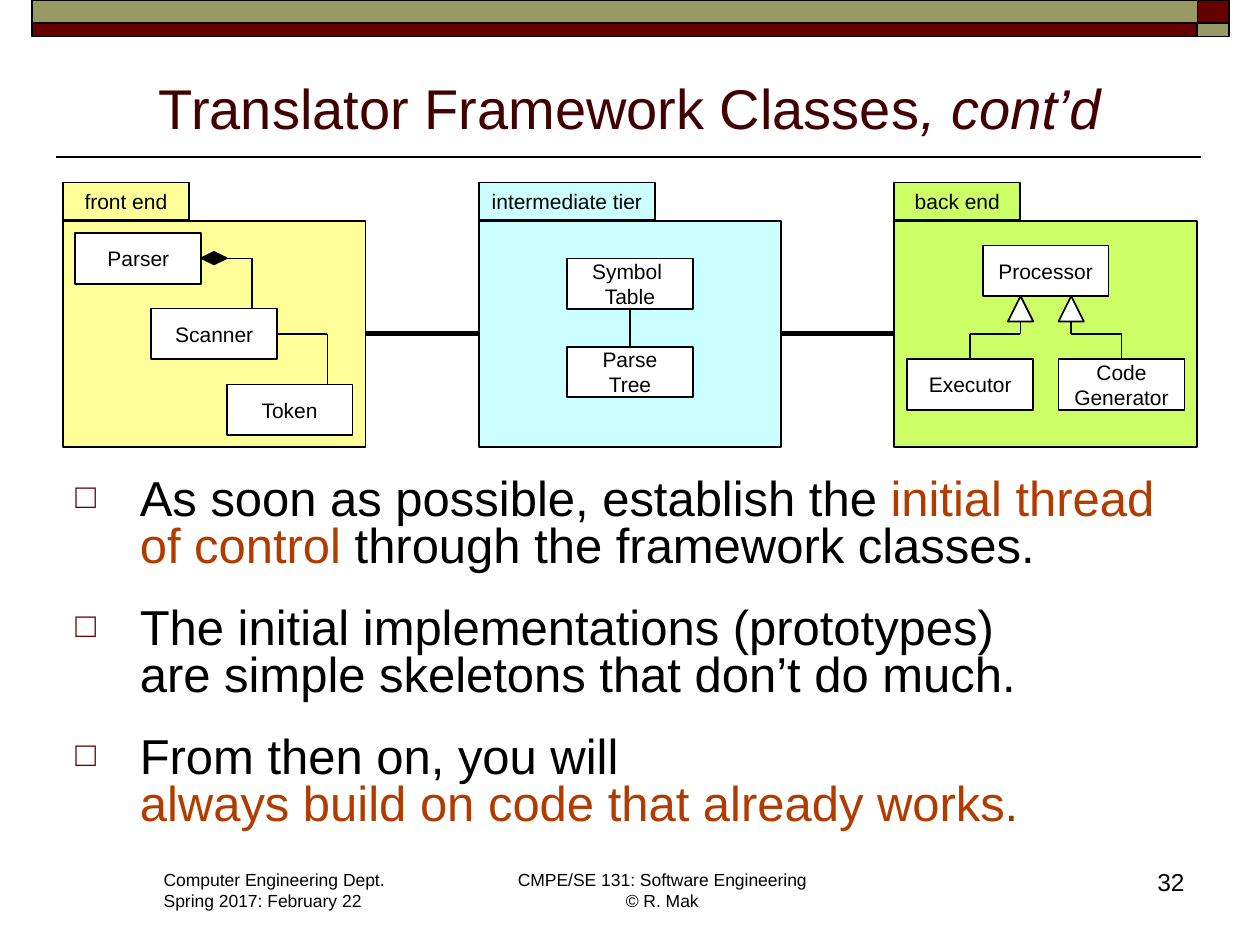
from itertools import pairwise

from lxml.etree import SubElement
from pptx import Presentation
from pptx.dml.color import RGBColor
from pptx.enum.shapes import MSO_CONNECTOR as Connector, MSO_SHAPE as Shape
from pptx.enum.text import MSO_ANCHOR as Anchor, PP_ALIGN as Align
from pptx.oxml.ns import qn
from pptx.util import Cm, Pt

FONT = "Arial"
BLACK, WHITE, MAROON, OLIVE = "000000", "FFFFFF", "660000", "999966"
TITLE_COLOR, ACCENT, STOP_COLOR = "420000", "B23C00", "993300"

# All positions below are in inches: left, top, width, height.
BANDS = [
    (9.5, 0, 0.25, 0.18, MAROON),
    (0.25, 0, 9.25, 0.18, OLIVE),
    (0.25, 0.18, 9.25, 0.11, MAROON),
    (9.5, 0.18, 0.25, 0.11, OLIVE),
]
TITLE = [("Translator Framework Classes", False), (", cont’d", True)]

# Label, tab width, colour
PACKAGES = [
    ("front end", 1, "FFFF99"),
    ("intermediate tier", 1.4, "CCFFFF"),
    ("back end", 1, "CCFF66"),
]
PACKAGE_LEFT, PACKAGE_TOP, PACKAGE_STEP = 0.5, 1.75, 3.3
PACKAGE_WIDTH, PACKAGE_HEIGHT, TAB_HEIGHT = 2.4, 1.8, 0.3

# Lines of the name, left, top
CLASSES = [
    (["Parser"], 0.6, 1.85),
    (["Scanner"], 1.2, 2.45),
    (["Token"], 1.8, 3.05),
    (["Symbol ", "Table"], 4.5, 2.05),
    (["Parse", "Tree"], 4.5, 2.75),
    (["Processor"], 7.8, 1.95),
    (["Executor"], 7.2, 2.85),
    (["Code", "Generator"], 8.4, 2.85),
]
CLASS_WIDTH, CLASS_HEIGHT = 1, 0.4
INHERITANCE_ARROWS = [(8, 2.35), (8.4, 2.35)]
RELATIONS = [
    [(1.8, 2.05), (2, 2.05), (2, 2.45)],
    [(2.2, 2.65), (2.6, 2.65), (2.6, 3.05)],
    [(5, 2.45), (5, 2.75)],
    [(8.1, 2.55), (8.1, 2.65), (7.7, 2.65), (7.7, 2.85)],
    [(8.5, 2.55), (8.5, 2.65), (8.9, 2.65), (8.9, 2.85)],
]
BULLETS = [
    [("As soon as possible, establish the ", BLACK),
     ("initial thread of control ", ACCENT),
     ("through the framework classes.", BLACK)],
    [("The initial implementations (prototypes) \n"
      "are simple skeletons that don’t do much.", BLACK)],
    [("From then on, you will \n", BLACK),
     ("always build on code that already works", ACCENT),
     (".", STOP_COLOR)],
]
FOOTER_LEFT = ["Computer Engineering Dept.", "Spring 2017: February 22"]
FOOTER_CENTER = ["CMPE/SE 131: Software Engineering\n© R. Mak"]
PAGE_NUMBER = ["32"]


def inches(*values):
    return [Cm(round(value * 2.54, 2)) for value in values]


def color(hex_string):
    return RGBColor.from_string(hex_string)


def add_run(paragraph, text, size, hex_string=BLACK, italic=False):
    """Add text to a paragraph, turning each newline into a line break."""
    for index, part in enumerate(text.split("\n")):
        if index:
            paragraph.add_line_break()
        if part:
            run = paragraph.add_run()
            run.text = part
            run.font.name = FONT
            run.font.size = Pt(size)
            run.font.italic = italic
            run.font.color.rgb = color(hex_string)


def add_paragraphs(frame, count):
    return [frame.paragraphs[0]] + [frame.add_paragraph() for _ in range(count - 1)]


def write_lines(frame, lines, size, align):
    for paragraph, line in zip(add_paragraphs(frame, len(lines)), lines):
        paragraph.alignment = align
        add_run(paragraph, line, size)


def add_box(slide, box, fill, lines=(), kind=Shape.RECTANGLE):
    shape = slide.shapes.add_shape(kind, *inches(*box))
    shape.shadow.inherit = False
    shape.fill.solid()
    shape.fill.fore_color.rgb = color(fill)
    shape.line.color.rgb = color(BLACK)
    shape.line.width = Pt(1)
    if lines:
        shape.text_frame.word_wrap = False
        shape.text_frame.vertical_anchor = Anchor.MIDDLE
        write_lines(shape.text_frame, lines, 12, Align.CENTER)


def add_line(slide, start, end, width=1):
    line = slide.shapes.add_connector(Connector.STRAIGHT, *inches(*start, *end))
    line.line.color.rgb = color(BLACK)
    line.line.width = Pt(width)
    SubElement(line._element.spPr, qn("a:effectLst"))


def add_text_frame(slide, box, wrap=True):
    frame = slide.shapes.add_textbox(*inches(*box)).text_frame
    frame.word_wrap = wrap
    return frame


def set_bullet(paragraph):
    properties = paragraph._p.get_or_add_pPr()
    indent = Cm(1.3)
    properties.set("marL", str(indent))
    properties.set("indent", str(-indent))
    bullet_color = SubElement(properties, qn("a:buClr"))
    SubElement(bullet_color, qn("a:srgbClr"), val=MAROON)
    SubElement(properties, qn("a:buSzPct"), val="70000")
    SubElement(properties, qn("a:buFont"), typeface=FONT)
    SubElement(properties, qn("a:buChar"), char="□")


def add_header(slide):
    add_line(slide, (9.53, 1.25), (0.44, 1.25))
    for *box, fill in BANDS:
        add_box(slide, box, fill)
    frame = add_text_frame(slide, (0.5, 0.45, 9, 0.72))
    frame.vertical_anchor = Anchor.BOTTOM
    paragraph = frame.paragraphs[0]
    paragraph.alignment = Align.CENTER
    for text, italic in TITLE:
        add_run(paragraph, text, 32, TITLE_COLOR, italic)


def add_diagram(slide):
    link_y = PACKAGE_TOP + PACKAGE_HEIGHT / 2
    for index, (label, tab_width, fill) in enumerate(PACKAGES):
        left = PACKAGE_LEFT + index * PACKAGE_STEP
        add_box(slide, (left, PACKAGE_TOP, PACKAGE_WIDTH, PACKAGE_HEIGHT), fill)
        add_box(slide, (left, PACKAGE_TOP - TAB_HEIGHT, tab_width, TAB_HEIGHT), fill, [label])
        if index:
            previous_right = left - PACKAGE_STEP + PACKAGE_WIDTH
            add_line(slide, (previous_right, link_y), (left, link_y), 3)
    for lines, left, top in CLASSES:
        add_box(slide, (left, top, CLASS_WIDTH, CLASS_HEIGHT), WHITE, lines)
    for left, top in INHERITANCE_ARROWS:
        add_box(slide, (left, top, 0.2, 0.2), WHITE, kind=Shape.ISOSCELES_TRIANGLE)
    add_box(slide, (1.6, 2, 0.2, 0.1), BLACK, kind=Shape.DIAMOND)
    for points in RELATIONS:
        for start, end in pairwise(points):
            add_line(slide, start, end)


def add_bullets(slide):
    frame = add_text_frame(slide, (0.5, 3.75, 9, 2.95))
    paragraphs = add_paragraphs(frame, len(BULLETS))
    for index, (paragraph, runs) in enumerate(zip(paragraphs, BULLETS)):
        set_bullet(paragraph)
        paragraph.line_spacing = 0.8
        if index:
            paragraph.space_before = Pt(20)
        for text, hex_string in runs:
            add_run(paragraph, text, 28, hex_string)


def add_footer(slide):
    write_lines(add_text_frame(slide, (1.2, 6.85, 1.97, 0.44), False), FOOTER_LEFT, 10, Align.LEFT)
    write_lines(add_text_frame(slide, (4, 6.85, 2.51, 0.44), False), FOOTER_CENTER, 10, Align.CENTER)
    write_lines(add_text_frame(slide, (7.42, 6.83, 2.08, 0.5)), PAGE_NUMBER, 14, Align.RIGHT)


def main():
    presentation = Presentation()
    presentation.slide_width, presentation.slide_height = inches(10, 7.5)
    slide = presentation.slides.add_slide(presentation.slide_layouts[6])
    add_header(slide)
    add_diagram(slide)
    add_bullets(slide)
    add_footer(slide)
    presentation.save("out.pptx")


if __name__ == "__main__":
    main()
